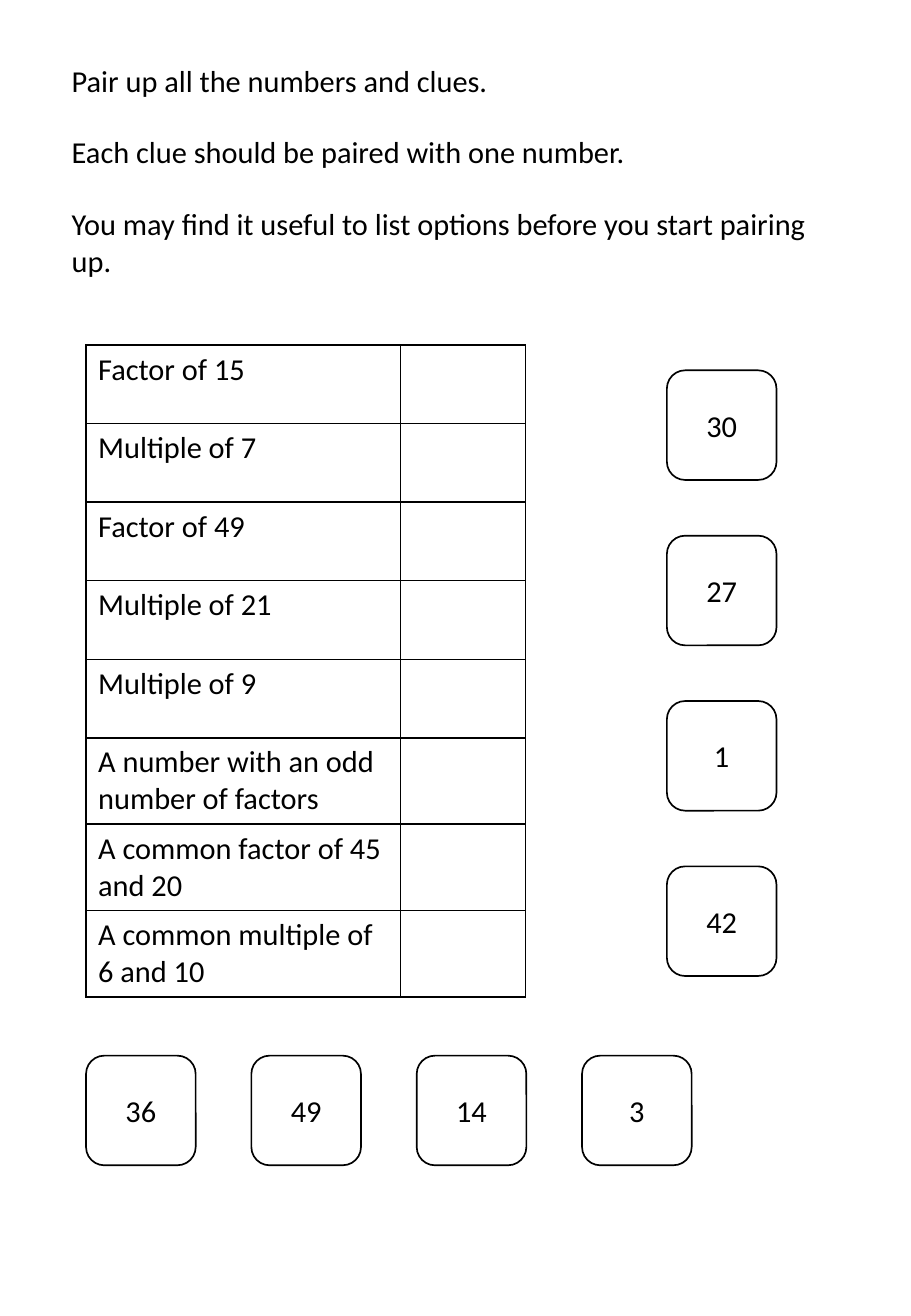
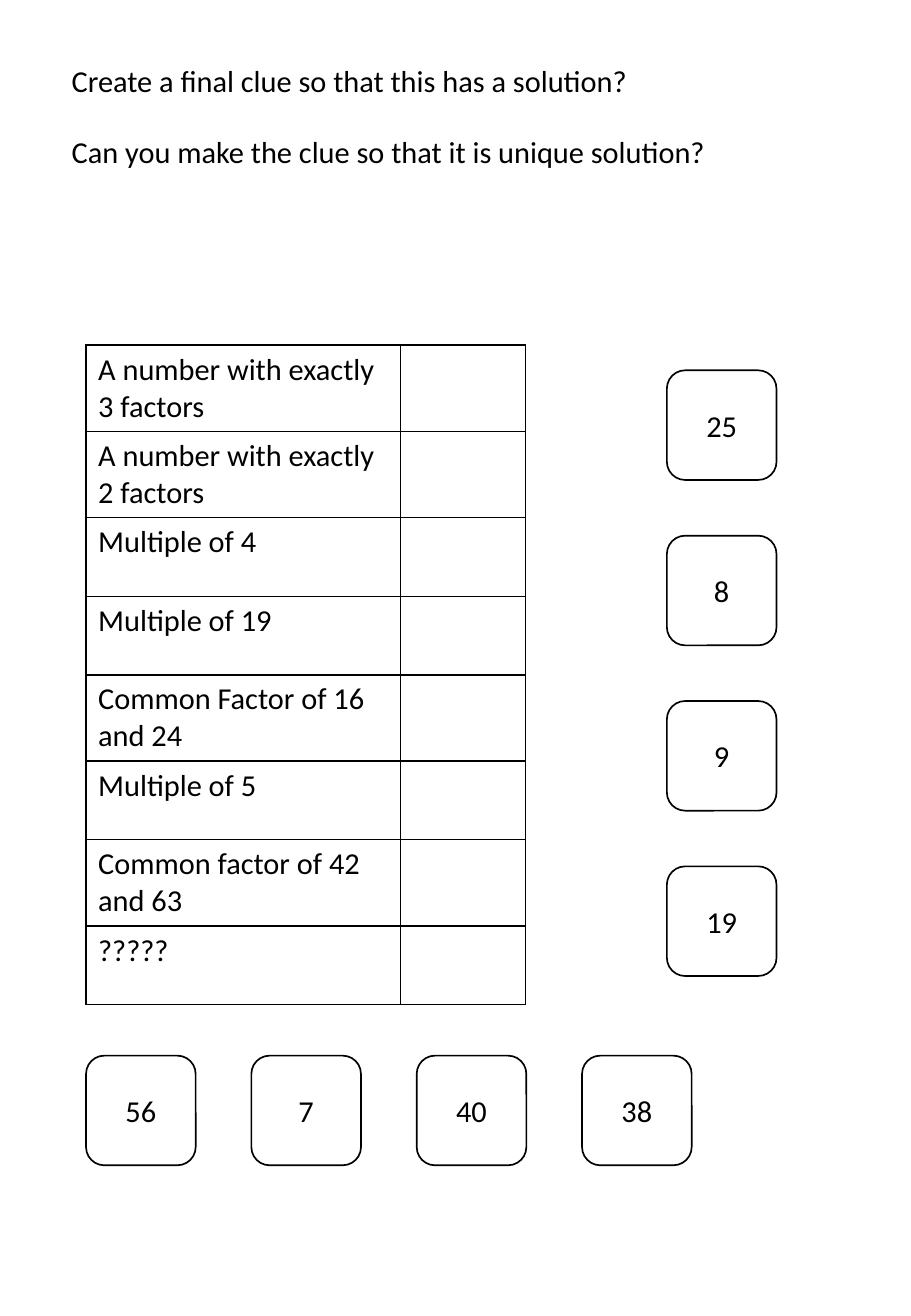
from pptx import Presentation
from pptx.dml.color import RGBColor
from pptx.enum.shapes import MSO_SHAPE as Shape
from pptx.enum.text import MSO_ANCHOR as Anchor, MSO_AUTO_SIZE as Fit, PP_ALIGN as Align
from pptx.oxml import parse_xml
from pptx.oxml.ns import nsdecls
from pptx.util import Pt

BLACK = RGBColor(0, 0, 0)
WHITE = RGBColor(255, 255, 255)
TITLE_ONLY = 5

SHEETS = [
    dict(
        intro=["Pair up all the numbers and clues.",
               "Each clue should be paired with one number.",
               "You may find it useful to list options before you start pairing up."],
        clues=["Factor of 15", "Multiple of 7", "Factor of 49", "Multiple of 21",
               "Multiple of 9", "A number with an odd number of factors",
               "A common factor of 45 and 20", "A common multiple of 6 and 10"],
        side=[30, 27, 1, 42],
        base=[36, 49, 14, 3],
    ),
    dict(
        intro=["Create a final clue so that this has a solution?",
               "Can you make the clue so that it is unique solution?"],
        clues=["A number with exactly 3 factors", "A number with exactly 2 factors",
               "Multiple of 4", "Multiple of 19", "Common Factor of 16 and 24",
               "Multiple of 5", "Common factor of 42 and 63", "?????"],
        side=[25, 8, 9, 19],
        base=[56, 7, 40, 38],
    ),
]


class Deck:
    font = "Calibri"
    size = Pt(18)
    line = Pt(1)
    left = 51
    card_size = 65

    def __init__(self):
        self.prs = Presentation()
        self.prs.slide_width, self.prs.slide_height = Pt(540), Pt(780)

    def start(self):
        layout = self.prs.slide_layouts[TITLE_ONLY]
        self.slide = self.prs.slides.add_slide(layout)

    def set_text(self, frame, lines, align=Align.LEFT, gap=0):
        frame.word_wrap = True
        for i, text in enumerate(lines):
            para = frame.add_paragraph() if i else frame.paragraphs[0]
            para.text = text
            para.alignment = align
            para.space_before = Pt(gap if i else 0)
            para.font.name = self.font
            para.font.size = self.size
            para.font.color.rgb = BLACK

    def intro(self, lines):
        box = self.slide.shapes.title
        box.left, box.top, box.width, box.height = Pt(35.3), Pt(33), Pt(463), Pt(150)
        frame = box.text_frame
        frame.auto_size = Fit.NONE
        frame.vertical_anchor = Anchor.TOP
        self.set_text(frame, lines, gap=21)

    def border(self, cell):
        props = cell._tc.get_or_add_tcPr()
        for side in "LRTB":
            props.append(parse_xml(
                f'<a:ln{side} {nsdecls("a")} w="{self.line}"><a:solidFill>'
                f'<a:srgbClr val="{BLACK}"/></a:solidFill></a:ln{side}>'))

    def table(self, clues):
        """Clues on the left, an empty answer cell beside each."""
        widths, height = (186.5, 74), 46.6
        table = self.slide.shapes.add_table(
            len(clues), len(widths), Pt(self.left), Pt(204.5),
            Pt(sum(widths)), Pt(height * len(clues))).table
        table.first_row = table.horz_banding = False
        for col, width in zip(table.columns, widths):
            col.width = Pt(width)
        for row, clue in zip(table.rows, clues):
            row.height = Pt(height)
            for cell, text in zip(row.cells, (clue, "")):
                self.border(cell)
                cell.fill.background()
                self.set_text(cell.text_frame, [text])

    def card(self, value, x, y):
        card = self.slide.shapes.add_shape(
            Shape.ROUNDED_RECTANGLE, Pt(x), Pt(y),
            Pt(self.card_size), Pt(self.card_size))
        card.shadow.inherit = False
        card.fill.solid()
        card.fill.fore_color.rgb = WHITE
        card.line.color.rgb = BLACK
        card.line.width = self.line
        card.text_frame.vertical_anchor = Anchor.MIDDLE
        self.set_text(card.text_frame, [str(value)], Align.CENTER)

    def cards(self, side, base):
        """One column of cards beside the table, one row below it."""
        step = 98
        for i, value in enumerate(side):
            self.card(value, 395.3, 219.5 + i * step)
        for i, value in enumerate(base):
            self.card(value, self.left + i * step, 625.7)


def main():
    deck = Deck()
    for sheet in SHEETS:
        deck.start()
        deck.intro(sheet["intro"])
        deck.table(sheet["clues"])
        deck.cards(sheet["side"], sheet["base"])
    deck.prs.save("out.pptx")


if __name__ == "__main__":
    main()
